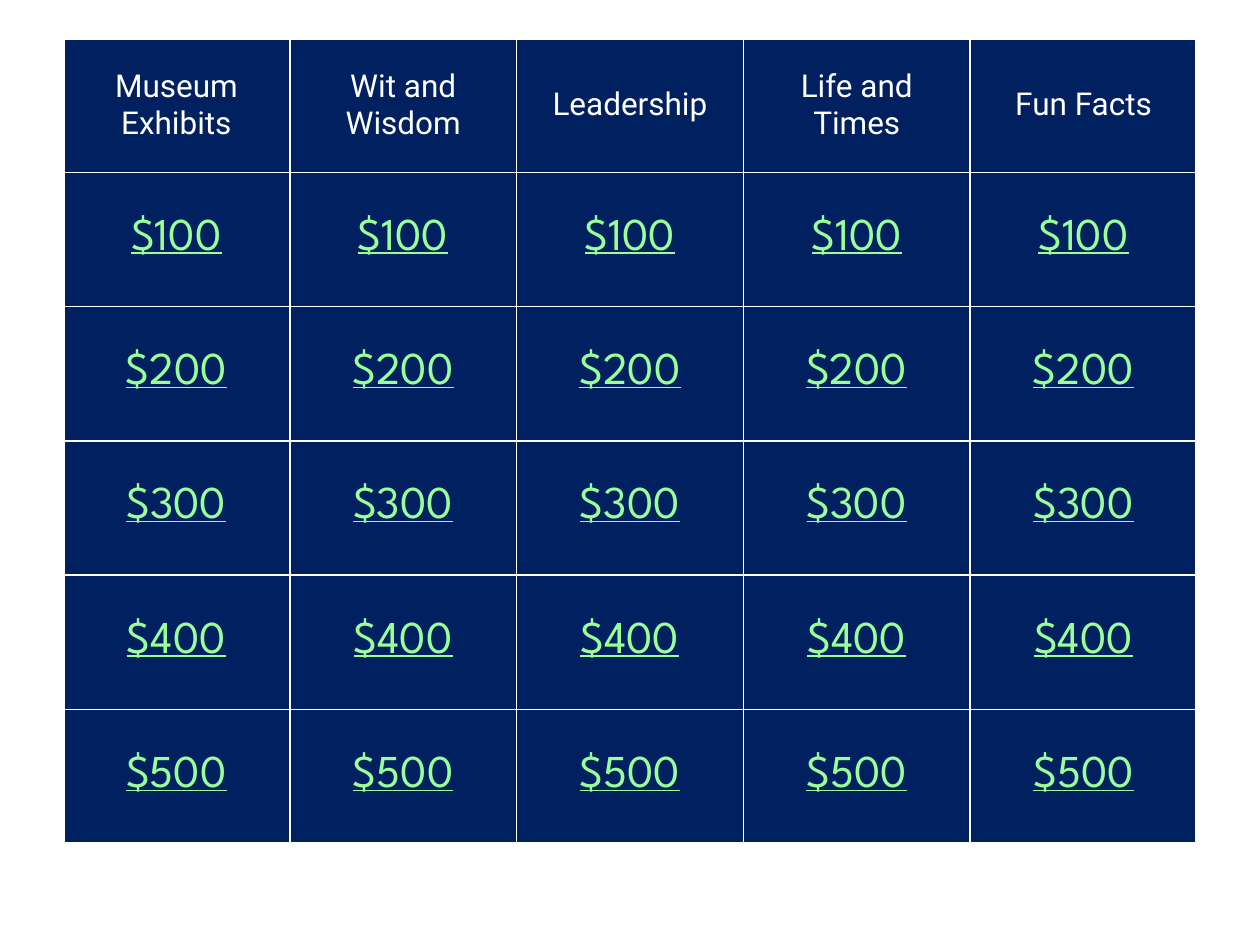
"""Build a quiz board slide with five topics and five prize rows."""
import pptx
import pptx.dml.color
import pptx.enum.text
import pptx.oxml
import pptx.oxml.ns
import pptx.util

PX = 914400 / 126
NAVY = pptx.dml.color.RGBColor(0x00, 0x20, 0x60)
WHITE = pptx.dml.color.RGBColor(0xFF, 0xFF, 0xFF)
GREEN = pptx.dml.color.RGBColor(0x99, 0xFF, 0x99)
THIN, THICK = 1, 2.25


def px(size):
    return pptx.util.Emu(round(size * PX))


def edge(cell, side, width):
    space = pptx.oxml.ns.nsdecls("a")
    line = pptx.oxml.parse_xml(
        f'<a:ln{side} {space} w="{pptx.util.Pt(width)}"><a:solidFill>'
        f'<a:srgbClr val="{WHITE}"/></a:solidFill></a:ln{side}>'
    )
    cell._tc.get_or_add_tcPr().append(line)


deck = pptx.Presentation()
deck.slide_width = px(1260)
deck.slide_height = px(945)
slide = deck.slides.add_slide(deck.slide_layouts[6])

topics = ["Museum Exhibits", "Wit and Wisdom", "Leadership", "Life and Times", "Fun Facts"]
board = [topics] + [[f"${prize}"] * len(topics) for prize in range(100, 600, 100)]
rows, cols = len(board), len(topics)

table = slide.shapes.add_table(rows, cols, px(63), px(38), px(1134), px(806)).table
table.first_row = False
table.horz_banding = False

for row, texts in enumerate(board):
    name, size, color = ("League Spartan", 26, GREEN) if row else ("Roboto", 18, WHITE)
    for col, text in enumerate(texts):
        cell = table.cell(row, col)
        outer = {"L": col == 0, "R": col == cols - 1, "T": row == 0, "B": row == rows - 1}
        for side, thick in outer.items():
            edge(cell, side, THICK if thick else THIN)
        cell.fill.solid()
        cell.fill.fore_color.rgb = NAVY
        cell.vertical_anchor = pptx.enum.text.MSO_ANCHOR.MIDDLE
        cell.text = text
        para = cell.text_frame.paragraphs[0]
        para.alignment = pptx.enum.text.PP_ALIGN.CENTER
        para.space_before = pptx.util.Pt(size / 5)
        font = para.font
        font.name = name
        font.size = pptx.util.Pt(size)
        font.color.rgb = color
        font.underline = row > 0

deck.save("out.pptx")
